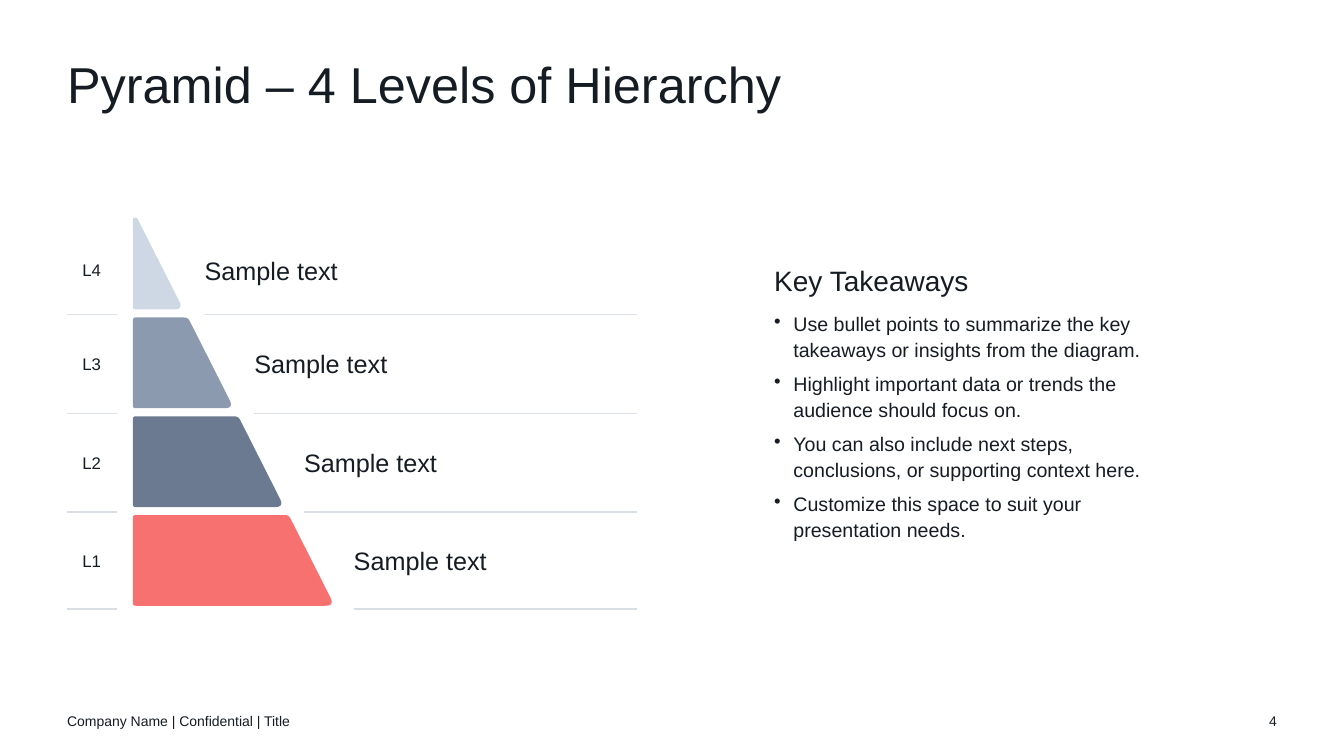
import math
from dataclasses import dataclass

import lxml.etree
import pptx
import pptx.dml.color
import pptx.enum.shapes
import pptx.enum.text
import pptx.oxml.ns
import pptx.shapes.autoshape
import pptx.slide
import pptx.text.text
import pptx.util

Pt = pptx.util.Pt
Align = pptx.enum.text.PP_ALIGN
Anchor = pptx.enum.text.MSO_ANCHOR

FONT = "Arial"
INK = "151C23"
RULE = "D9DEE5"
MARGIN = 48
PYRAMID_LEFT = 95
BASE_RIGHT, RIGHT_STEP = 131, 36
SAMPLE_LEFT, SAMPLE_STEP = 146.2, 35.5
SIDE_SLOPE = 0.505
RULE_RIGHT = 455
BULLET_INDENT = 13.7


@dataclass
class Level:
    name: str
    fill: str
    top: float
    bottom: float
    text_top: float
    rule: float


@dataclass
class Corner:
    x: float
    y: float
    radius: float


LEVELS = [
    Level("L4", "CED8E4", 155.5, 221, 182.2, 224.6),
    Level("L3", "8C9AB0", 226.8, 291.6, 249.1, 295.2),
    Level("L2", "6B7A90", 297.4, 362.2, 319.7, 365.8),
    Level("L1", "F87171", 367.9, 432.7, 389.5, 434.9),
]

TAKEAWAYS = [
    "Use bullet points to summarize the key takeaways or insights from the diagram.",
    "Highlight important data or trends the audience should focus on.",
    "You can also include next steps, conclusions, or supporting context here.",
    "Customize this space to suit your presentation needs.",
]


def color(value: str) -> pptx.dml.color.RGBColor:
    return pptx.dml.color.RGBColor.from_string(value)


def add_frame(slide: pptx.slide.Slide, left: float, top: float, width: float, height: float,
              anchor: Anchor = Anchor.MIDDLE) -> pptx.text.text.TextFrame:
    shape = slide.shapes.add_textbox(Pt(left), Pt(top), Pt(width), Pt(height))
    frame = shape.text_frame
    frame.word_wrap = True
    frame.vertical_anchor = anchor
    frame.margin_left = frame.margin_right = frame.margin_top = frame.margin_bottom = 0
    return frame


def write(frame: pptx.text.text.TextFrame, text: str, *, size: float, align: Align = Align.LEFT,
          line_spacing: float = 1.0, before: float = 0, after: float = 0,
          bullet: bool = False) -> None:
    paragraph = frame.add_paragraph() if frame.text else frame.paragraphs[0]
    paragraph.alignment = align
    paragraph.line_spacing = line_spacing
    paragraph.space_before = Pt(before)
    paragraph.space_after = Pt(after)
    run = paragraph.add_run()
    run.text = text
    run.font.name = FONT
    run.font.size = Pt(size)
    run.font.color.rgb = color(INK)
    if bullet:
        properties = paragraph._p.get_or_add_pPr()
        properties.set("marL", str(Pt(BULLET_INDENT)))
        properties.set("indent", str(-Pt(BULLET_INDENT)))
        mark = lxml.etree.SubElement(properties, pptx.oxml.ns.qn("a:buChar"))
        mark.set("char", "•")


def add_rule(slide: pptx.slide.Slide, left: float, right: float, y: float) -> None:
    connector = slide.shapes.add_connector(
        pptx.enum.shapes.MSO_CONNECTOR.STRAIGHT, Pt(left), Pt(y), Pt(right), Pt(y))
    connector.line.color.rgb = color(RULE)
    connector.line.width = Pt(1)
    lxml.etree.SubElement(connector._element.spPr, pptx.oxml.ns.qn("a:effectLst"))


def toward(corner: Corner, target: Corner) -> tuple[float, float]:
    share = corner.radius / math.hypot(target.x - corner.x, target.y - corner.y)
    return (corner.x + share * (target.x - corner.x), corner.y + share * (target.y - corner.y))


def rounded_outline(corners: list[Corner], steps: int = 8) -> list[tuple[int, int]]:
    points = []
    for index, corner in enumerate(corners):
        start = toward(corner, corners[index - 1])
        end = toward(corner, corners[(index + 1) % len(corners)])
        for step in range(steps + 1):
            t = step / steps
            x, y = ((1 - t) ** 2 * a + 2 * t * (1 - t) * b + t ** 2 * c
                    for a, b, c in zip(start, (corner.x, corner.y), end))
            points.append((Pt(x), Pt(y)))
    return points


def add_pyramid_step(slide: pptx.slide.Slide, level: Level, right: float) -> None:
    top_right = right - SIDE_SLOPE * (level.bottom - level.top)
    top_radius = min(3, (top_right - PYRAMID_LEFT) / 2)
    outline = rounded_outline([
        Corner(PYRAMID_LEFT, level.top, min(2, top_radius)),
        Corner(top_right, level.top, top_radius),
        Corner(right, level.bottom, 6.5),
        Corner(PYRAMID_LEFT, level.bottom, 2),
    ])
    builder = slide.shapes.build_freeform(*outline[0])
    builder.add_line_segments(outline[1:], close=True)
    shape = builder.convert_to_shape()
    shape.shadow.inherit = False
    shape.fill.solid()
    shape.fill.fore_color.rgb = color(level.fill)
    shape.line.fill.background()


def add_level(slide: pptx.slide.Slide, index: int, level: Level) -> None:
    sample_left = SAMPLE_LEFT + index * SAMPLE_STEP
    add_rule(slide, MARGIN, 83.5, level.rule)
    add_rule(slide, sample_left, RULE_RIGHT, level.rule)
    write(add_frame(slide, 51.1, level.text_top, 28.8, 21.6), level.name,
          size=12, align=Align.CENTER)
    write(add_frame(slide, sample_left, level.text_top, 201.6, 21.6), "Sample text", size=18)
    add_pyramid_step(slide, level, BASE_RIGHT + index * RIGHT_STEP)


def main() -> None:
    presentation = pptx.Presentation()
    presentation.slide_width = Pt(960)
    presentation.slide_height = Pt(540)
    slide = presentation.slides.add_slide(presentation.slide_layouts[6])

    write(add_frame(slide, MARGIN, 43.2, 864, 43.2, Anchor.TOP),
          "Pyramid – 4 Levels of Hierarchy", size=36, line_spacing=0.9)

    for index, level in enumerate(LEVELS):
        add_level(slide, index, level)

    takeaways = add_frame(slide, 553, 129.6, 287.3, 313.2)
    write(takeaways, "Key Takeaways", size=20, line_spacing=1.1, before=6, after=3)
    for takeaway in TAKEAWAYS:
        write(takeaways, takeaway, size=14, line_spacing=1.1, before=6, bullet=True)

    write(add_frame(slide, MARGIN, 500.4, 324, 28.8),
          "Company Name | Confidential | Title", size=10)
    write(add_frame(slide, 876, 500.4, 36, 28.8), "4", size=10, align=Align.RIGHT)

    presentation.save("out.pptx")


if __name__ == "__main__":
    main()
